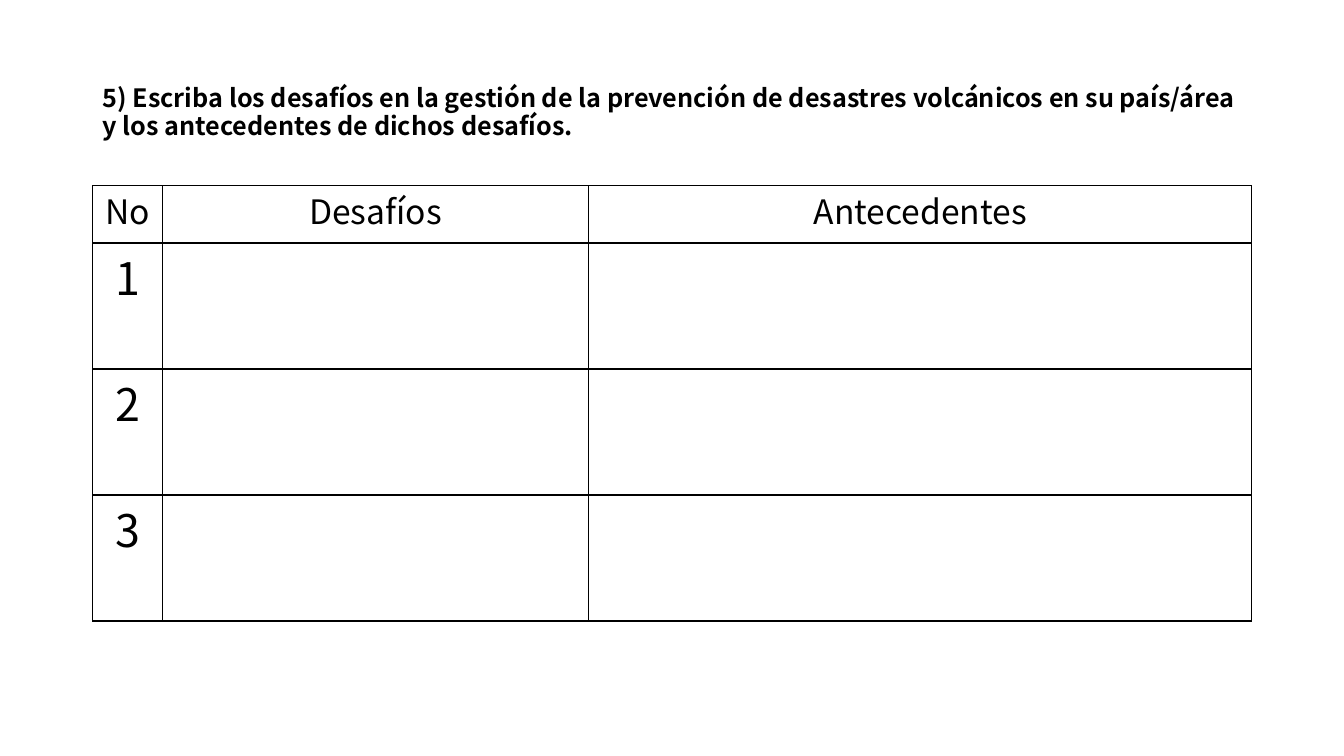
from lxml import etree
from pptx import Presentation
from pptx.dml.color import RGBColor
from pptx.enum.text import MSO_ANCHOR, PP_ALIGN
from pptx.oxml.ns import qn
from pptx.util import Pt

CENTER = PP_ALIGN.CENTER
LEFT = PP_ALIGN.LEFT
MIDDLE = MSO_ANCHOR.MIDDLE
COLORS = {"ink": "000000"}
FONT = "Noto Sans CJK JP"
BORDER_SIDES = ("a:lnL", "a:lnR", "a:lnT", "a:lnB")

MARGIN_LEFT, CONTENT_WIDTH = 66.24, 828
TABLE_TOP = 132.6
COLUMN_WIDTHS = (49.7, 304.5, 473.8)
HEADER_HEIGHT, ROW_HEIGHT = 41, 90
HEADINGS = ("No", "Desafíos", "Antecedentes")
CHALLENGE_COUNT = 3


class SlideBuilder:
    def __init__(self, slide):
        self.slide = slide

    def style(self, paragraph, size, align, bold=False):
        paragraph.alignment = align
        font = paragraph.font
        font.name = FONT
        font.size = Pt(size)
        font.bold = bold
        font.color.rgb = RGBColor.from_string(COLORS["ink"])

    def title(self, text, left, top, width, height):
        frame = self.slide.shapes.add_textbox(
            Pt(left), Pt(top), Pt(width), Pt(height)).text_frame
        frame.word_wrap = True
        frame.vertical_anchor = MIDDLE
        paragraph = frame.paragraphs[0]
        paragraph.text = text
        paragraph.line_spacing = 0.9
        self.style(paragraph, 18, LEFT, bold=True)

    def border(self, cell):
        properties = cell._tc.get_or_add_tcPr()
        for position, side in enumerate(BORDER_SIDES):
            line = etree.Element(qn(side), w=str(Pt(1)))
            fill = etree.SubElement(line, qn("a:solidFill"))
            etree.SubElement(fill, qn("a:srgbClr"), val=COLORS["ink"])
            properties.insert(position, line)

    def cell(self, cell, text, size):
        cell.margin_left = cell.margin_right = Pt(5)
        cell.margin_top = cell.margin_bottom = 0
        cell.fill.background()
        self.border(cell)
        paragraph = cell.text_frame.paragraphs[0]
        paragraph.text = text
        self.style(paragraph, size, CENTER)

    def table(self, rows, left, top, widths, heights):
        """Draw a grid; the first row is set smaller, as headings."""
        grid = self.slide.shapes.add_table(
            len(rows), len(widths), Pt(left), Pt(top),
            Pt(sum(widths)), Pt(sum(heights))).table
        grid.horz_banding = False
        for column, width in zip(grid.columns, widths):
            column.width = Pt(width)
        for index, (row, height) in enumerate(zip(rows, heights)):
            grid.rows[index].height = Pt(height)
            size = 24 if index == 0 else 32
            for cell, text in zip(grid.rows[index].cells, row):
                self.cell(cell, text, size)
        grid.first_row = False


def main():
    deck = Presentation()
    deck.slide_width, deck.slide_height = Pt(960), Pt(540)
    builder = SlideBuilder(deck.slides.add_slide(deck.slide_layouts[6]))
    builder.title(
        "5) Escriba los desafíos en la gestión de la prevención de desastres "
        "volcánicos en su país/área y los antecedentes de dichos desafíos.",
        MARGIN_LEFT, 28.8, CONTENT_WIDTH, 104.4)
    challenges = [(str(number), "", "")
                  for number in range(1, CHALLENGE_COUNT + 1)]
    builder.table([HEADINGS] + challenges, MARGIN_LEFT, TABLE_TOP, COLUMN_WIDTHS,
                  [HEADER_HEIGHT] + [ROW_HEIGHT] * CHALLENGE_COUNT)
    deck.save("out.pptx")


if __name__ == "__main__":
    main()
